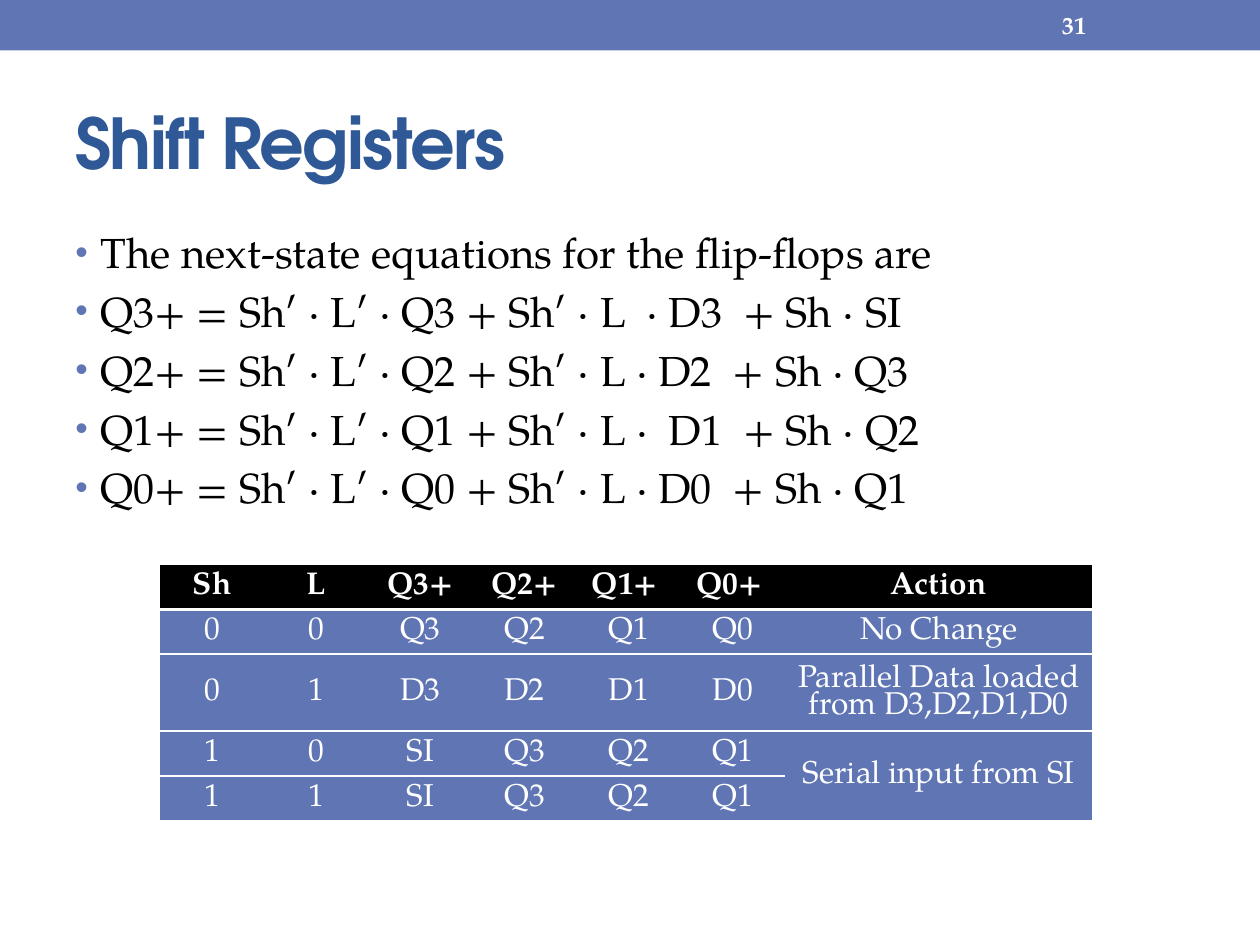
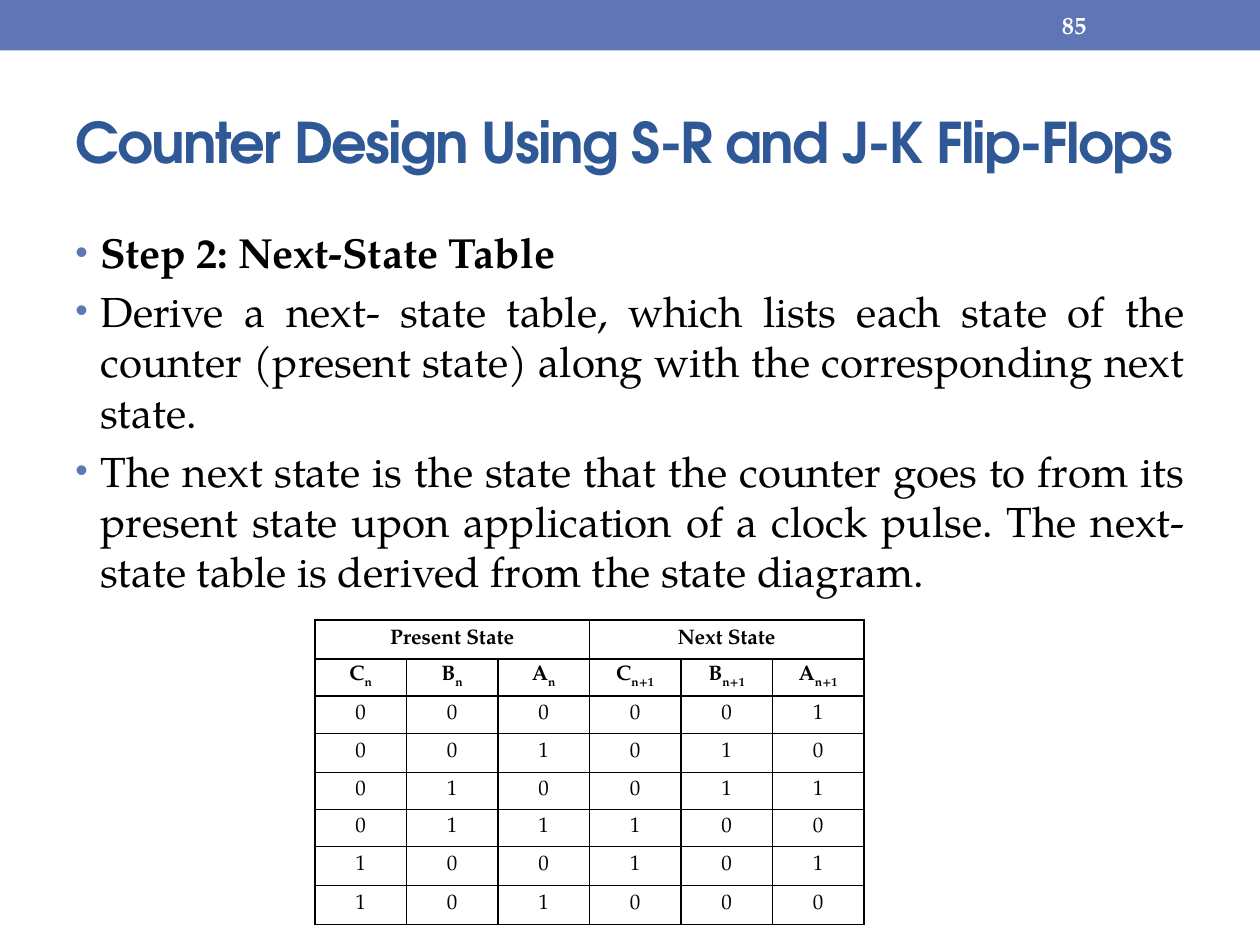
from lxml.etree import SubElement
from pptx import Presentation
from pptx.dml.color import RGBColor
from pptx.enum.shapes import MSO_SHAPE
from pptx.enum.text import MSO_ANCHOR, PP_ALIGN
from pptx.oxml.ns import qn
from pptx.util import Inches, Pt

SLIDE_W, SLIDE_H = Inches(10), Inches(7.5)
COLUMNS = 100
UNIT = SLIDE_W / COLUMNS

BLUE, NAVY, WHITE, BLACK = "6076B4", "2F5897", "FFFFFF", "000000"
HEADING, SERIF = "TeX Gyre Adventor", "TeX Gyre Pagella"

BAND = (0, 0, COLUMNS, 4)
NUMBER = (83.3, 0.2, 11.7, 3.6)
TITLE = (5, 5.8, 90, 10.8)
BODY = (5, 17.5, 90, 53.3)
NO_STYLE = "{2D5ABB26-0587-4C30-8999-92F81FD0307C}"

REGISTER_LINES = [
    "The next-state equations for the flip-flops are",
    "Q3+ = Sh′ · L′ · Q3 + Sh′ · L  · D3  + Sh · SI ",
    "Q2+ = Sh′ · L′ · Q2 + Sh′ · L · D2  + Sh · Q3 ",
    "Q1+ = Sh′ · L′ · Q1 + Sh′ · L ·  D1  + Sh · Q2 ",
    "Q0+ = Sh′ · L′ · Q0 + Sh′ · L · D0  + Sh · Q1",
]
REGISTER_TABLE = {
    "box": (12.7, 44.8),
    "cols": [8.27] * 6 + [24.4],
    "rows": [3.5, 3.5, 6.1, 3.5, 3.5],
    "cells": [
        ["Sh", "L", "Q3+", "Q2+", "Q1+ ", "Q0+ ", "Action"],
        ["0", "0", "Q3", "Q2", "Q1", "Q0", "No Change"],
        ["0", "1", "D3", "D2", "D1", "D0",
         "Parallel Data loaded from D3,D2,D1,D0"],
        ["1", "0", "SI", "Q3", "Q2", "Q1", "Serial input from SI"],
        ["1", "1", "SI", "Q3", "Q2", "Q1", ""],
    ],
    "merges": [((3, 6), (4, 6))],
    "headers": 1,
    "fills": [BLACK] + [BLUE] * 4,
    "line": WHITE,
    "row_rules": [1, 2, 1, 1, 1, 1],
    "col_rule": 0,
    "size": 18,
    "color": WHITE,
    "spacing": 0.85,
    "margins": (1, 0.5),
}

COUNTER_LINES = [
    "Step 2: Next-State Table",
    "Derive a next- state table, which lists each state of the counter "
    "(present state) along with the corresponding next state. ",
    "The next state is the state that the counter goes to from its present "
    "state upon application of a clock pulse. The next-state table is "
    "derived from the state diagram.",
]
COUNTER_TABLE = {
    "box": (25, 49.2),
    "cols": [7.26] * 6,
    "rows": [3.1, 2.95, 2.95, 3.1, 2.95, 2.95, 3.1, 3.1],
    "cells": [
        ["Present State", "", "", "Next State", "", ""],
        ["C_n", "B_n", "A_n", "C_n+1", "B_n+1", "A_n+1"],
        *map(list, ("000001", "001010", "010011",
                    "011100", "100101", "101000")),
    ],
    "merges": [((0, 0), (0, 2)), ((0, 3), (0, 5))],
    "headers": 2,
    "fills": [None] * 8,
    "line": BLACK,
    "row_rules": [1] * 9,
    "col_rule": 1,
    "size": 12,
    "color": BLACK,
    "spacing": 1.0,
    "margins": (0.7, 0),
}


def rgb(value):
    """Turn a hex string into a colour."""
    return RGBColor.from_string(value)


def place(*lengths):
    """Turn grid units into slide lengths."""
    return [round(n * UNIT) for n in lengths]


def apply(obj, values):
    """Set each named attribute on an object."""
    for name, value in values.items():
        setattr(obj, name, value)


def add_run(p, text, font, size, color, bold=False):
    """Append formatted text to a paragraph."""
    r = p.add_run()
    r.text = text
    apply(r.font, {"name": font, "size": Pt(size), "bold": bold})
    r.font.color.rgb = rgb(color)
    return r


def add_text_box(slide, box, anchor=MSO_ANCHOR.MIDDLE):
    """Add a wrapping text box and return its frame."""
    tf = slide.shapes.add_textbox(*place(*box)).text_frame
    apply(tf, {"word_wrap": True, "vertical_anchor": anchor})
    return tf


def add_band(slide, box, number):
    """Draw the top band with the slide number."""
    sp = slide.shapes.add_shape(MSO_SHAPE.RECTANGLE, *place(*box))
    sp.shadow.inherit = False
    sp.fill.solid()
    sp.fill.fore_color.rgb = rgb(BLUE)
    sp.line.fill.background()
    p = add_text_box(slide, NUMBER).paragraphs[0]
    add_run(p, number, SERIF, 14, WHITE, True)


def add_title(slide, box, text, size):
    """Write the slide title with tight letter spacing."""
    p = add_text_box(slide, box).paragraphs[0]
    r = add_run(p, text, HEADING, size, NAVY, True)
    r.font._element.set("spc", "-100")


def add_bullet(p):
    """Give a paragraph a hanging coloured bullet."""
    pPr = p._p.get_or_add_pPr()
    pPr.set("marL", str(Inches(0.2)))
    pPr.set("indent", str(-Inches(0.2)))
    color = SubElement(pPr, qn("a:buClr"))
    SubElement(color, qn("a:srgbClr"), val=BLUE)
    SubElement(pPr, qn("a:buSzPct"), val="85000")
    SubElement(pPr, qn("a:buFont"), typeface="Arial")
    SubElement(pPr, qn("a:buChar"), char="•")


def add_body(slide, box, lines, bold_first):
    """Write the justified bullet list."""
    tf = add_text_box(slide, box, MSO_ANCHOR.TOP)
    for i, line in enumerate(lines):
        p = tf.add_paragraph() if i else tf.paragraphs[0]
        apply(p, {"alignment": PP_ALIGN.JUSTIFY, "space_before": Pt(4.8)})
        add_bullet(p)
        add_run(p, line, SERIF, 24, BLACK, bold_first and i == 0)


def add_border(cell, side, width, color):
    """Draw one cell border, or none for zero width."""
    tcPr = cell._tc.get_or_add_tcPr()
    ln = SubElement(tcPr, qn(f"a:ln{side}"), w=str(Pt(width)))
    if width:
        fill = SubElement(ln, qn("a:solidFill"))
        SubElement(fill, qn("a:srgbClr"), val=color)
    else:
        SubElement(ln, qn("a:noFill"))


def fill_cell(cell, text, row, look):
    """Write and style one table cell."""
    margin_x, margin_y = place(*look["margins"])
    apply(cell, {
        "margin_left": margin_x, "margin_right": margin_x,
        "margin_top": margin_y, "margin_bottom": margin_y,
        "vertical_anchor": MSO_ANCHOR.MIDDLE,
    })
    top, bottom = look["row_rules"][row:row + 2]
    widths = {"L": look["col_rule"], "R": look["col_rule"],
              "T": top, "B": bottom}
    for side, width in widths.items():
        add_border(cell, side, width, look["line"])
    if look["fills"][row]:
        cell.fill.solid()
        cell.fill.fore_color.rgb = rgb(look["fills"][row])
    else:
        cell.fill.background()
    p = cell.text_frame.paragraphs[0]
    apply(p, {"alignment": PP_ALIGN.CENTER, "line_spacing": look["spacing"]})
    for i, part in enumerate(text.split("_")):
        r = add_run(p, part, SERIF, look["size"], look["color"],
                    row < look["headers"])
        if i:
            r.font._element.set("baseline", "-25000")


def add_state_table(slide, look):
    """Build a state table from its description."""
    cols, rows = look["cols"], look["rows"]
    box = (*look["box"], sum(cols), sum(rows))
    table = slide.shapes.add_table(len(rows), len(cols), *place(*box)).table
    apply(table, {"first_row": False, "horz_banding": False})
    table._tbl.tblPr.find(qn("a:tableStyleId")).text = NO_STYLE
    for column, width in zip(table.columns, place(*cols)):
        column.width = width
    for row, height in zip(table.rows, place(*rows)):
        row.height = height
    for first, last in look["merges"]:
        table.cell(*first).merge(table.cell(*last))
    for r, texts in enumerate(look["cells"]):
        for c, text in enumerate(texts):
            cell = table.cell(r, c)
            if not cell.is_spanned:
                fill_cell(cell, text, r, look)


def add_slide(prs, number, title, size, lines, look, bold_first=False):
    """Add a slide with band, title, bullets and table."""
    slide = prs.slides.add_slide(prs.slide_layouts[6])
    add_band(slide, BAND, number)
    add_title(slide, TITLE, title, size)
    add_body(slide, BODY, lines, bold_first)
    add_state_table(slide, look)


def main():
    """Build and save the presentation."""
    prs = Presentation()
    apply(prs, {"slide_width": SLIDE_W, "slide_height": SLIDE_H})
    add_slide(prs, "31", "Shift Registers", 40,
              REGISTER_LINES, REGISTER_TABLE)
    add_slide(prs, "85", "Counter Design Using S-R and J-K Flip-Flops", 32,
              COUNTER_LINES, COUNTER_TABLE, bold_first=True)
    prs.save("out.pptx")


if __name__ == "__main__":
    main()
